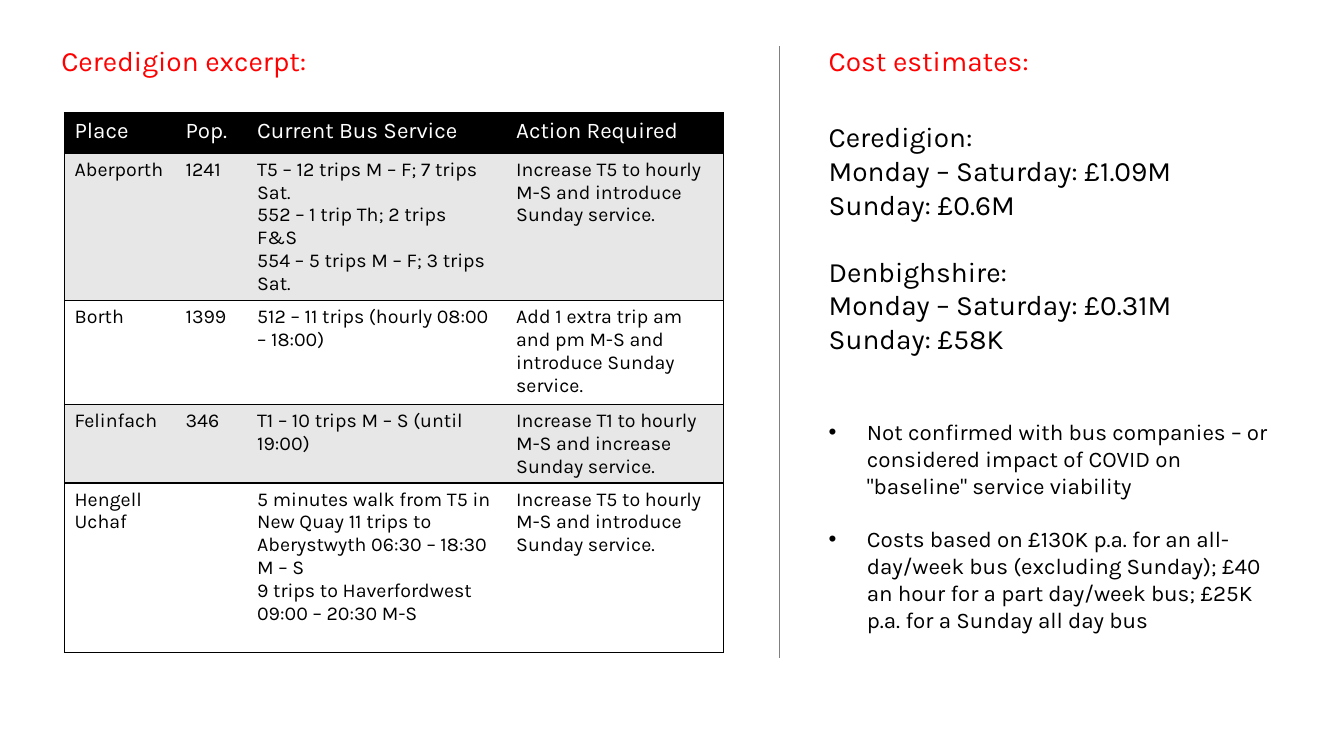
from lxml.etree import SubElement
from pptx import Presentation
from pptx.dml.color import RGBColor
from pptx.enum.shapes import MSO_CONNECTOR
from pptx.enum.text import MSO_AUTO_SIZE
from pptx.oxml.ns import qn
from pptx.util import Inches, Pt

COLORS = {"heading": "FF0000", "text": "000000", "header_text": "FFFFFF",
          "header": "000000", "shaded": "E7E7E7", "plain": "FFFFFF",
          "border": "000000", "divider": "808080"}
FONT = {"name": "Karla", "bold": False}
NBSP = chr(160)  # closes each table line, so the last word wraps with it

HEADINGS = ["Place", "Pop.", "Current Bus Service", "Action Required"]
PLACES = [
    ["Aberporth", "1241",
     "T5 – 12 trips M – F; 7 trips Sat.\n552 – 1 trip Th; 2 trips F&S\n"
     "554 – 5 trips M – F; 3 trips Sat.",
     "Increase T5 to hourly M-S and introduce Sunday service."],
    ["Borth", "1399", "512 – 11 trips (hourly 08:00 – 18:00)",
     "Add 1 extra trip am and pm M-S and introduce Sunday service."],
    ["Felinfach", "346", "T1 – 10 trips M – S (until 19:00)",
     "Increase T1 to hourly M-S and increase Sunday service."],
    ["Hengell Uchaf", "",
     "5 minutes walk from T5 in New Quay 11 trips to Aberystwyth 06:30 – 18:30 M – S\n"
     "9 trips to Haverfordwest 09:00 – 20:30 M-S",
     "Increase T5 to hourly M-S and introduce Sunday service."],
]
COLUMN_WIDTHS = [1.1, 0.71, 2.57, 2.16]
ROW_HEIGHTS = [0.4, 1.03, 1.03, 0.72, 1.68]

COSTS = [
    ["Ceredigion:", "Monday – Saturday: £1.09M", "Sunday: £0.6M"],
    ["Denbighshire:", "Monday – Saturday: £0.31M", "Sunday: £58K"],
]
CAVEATS = [
    ['Not confirmed with bus companies – or considered impact of COVID on '
     '"baseline" service viability'],
    ["Costs based on £130K p.a. for an all-day/week bus (excluding Sunday); £40 "
     "an hour for a part day/week bus; £25K p.a. for a Sunday all day bus"],
]


def rgb(color):
    return RGBColor.from_string(COLORS[color])


def add_text(paragraph, text, size, color):
    run = paragraph.add_run()
    run.text = text
    for attribute, value in {**FONT, "size": Pt(size)}.items():
        setattr(run.font, attribute, value)
    run.font.color.rgb = rgb(color)


def add_bullet(paragraph):
    properties = paragraph._p.get_or_add_pPr()
    indent = Inches(0.38)
    properties.set("marL", str(indent))
    properties.set("indent", str(-indent))
    SubElement(properties, qn("a:buFont"), typeface="Arial")
    SubElement(properties, qn("a:buChar"), char="•")


def add_groups(slide, place, groups, size, color="text", gap=0, bulleted=False):
    """Text box of line groups, with a gap in points between groups."""
    frame = slide.shapes.add_textbox(*map(Inches, place)).text_frame
    frame.word_wrap = True
    frame.auto_size = MSO_AUTO_SIZE.SHAPE_TO_FIT_TEXT
    for g, group in enumerate(groups):
        for i, line in enumerate(group):
            first = g == i == 0
            paragraph = frame.paragraphs[0] if first else frame.add_paragraph()
            if g and not i:
                paragraph.space_before = Pt(gap)
            if bulleted:
                add_bullet(paragraph)
            add_text(paragraph, line, size, color)


def set_borders(cell, visible):
    properties = cell._tc.get_or_add_tcPr()
    for side in "LRTB":
        line = SubElement(properties, qn(f"a:ln{side}"), w=str(Pt(1)))
        if side in visible:
            fill = SubElement(line, qn("a:solidFill"))
            SubElement(fill, qn("a:srgbClr"), val=COLORS["border"])
        else:
            SubElement(line, qn("a:noFill"))


def fill_cell(cell, text, size, color, background, borders):
    set_borders(cell, borders)
    cell.fill.solid()
    cell.fill.fore_color.rgb = rgb(background)
    frame = cell.text_frame
    for i, line in enumerate(text.split("\n")):
        paragraph = frame.add_paragraph() if i else frame.paragraphs[0]
        if line:
            add_text(paragraph, line + NBSP, size, color)


def add_service_table(slide):
    rows = [HEADINGS] + PLACES
    services = slide.shapes.add_table(
        len(rows), len(HEADINGS), Inches(0.64), Inches(1.12),
        Inches(sum(COLUMN_WIDTHS)), Inches(sum(ROW_HEIGHTS))).table
    services.first_row = services.horz_banding = False
    for column, width in zip(services.columns, COLUMN_WIDTHS):
        column.width = Inches(width)
    for row, height in zip(services.rows, ROW_HEIGHTS):
        row.height = Inches(height)
    for r, texts in enumerate(rows):
        background = ("shaded" if r % 2 else "plain") if r else "header"
        size, color = (14, "text") if r else (16, "header_text")
        for c, text in enumerate(texts):
            borders = "TB" + {0: "L", len(texts) - 1: "R"}.get(c, "")
            fill_cell(services.cell(r, c), text, size, color, background, borders)


def add_divider(slide, x, top, bottom):
    divider = slide.shapes.add_connector(
        MSO_CONNECTOR.STRAIGHT, *map(Inches, (x, top, x, bottom)))
    divider.line.color.rgb = rgb("divider")
    divider.line.width = Pt(0.5)
    SubElement(divider._element.spPr, qn("a:effectLst"))


def main():
    deck = Presentation()
    deck.slide_width, deck.slide_height = Inches(13.33), Inches(7.5)
    slide = deck.slides.add_slide(deck.slide_layouts[6])

    # Bus services by place
    add_service_table(slide)
    add_groups(slide, (0.51, 0.38, 4.9, 0.44), [["Ceredigion excerpt:"]], 20, "heading")

    # Cost estimates and their caveats
    add_groups(slide, (8.12, 0.38, 3.92, 0.44), [["Cost estimates:"]], 20, "heading")
    add_groups(slide, (8.12, 1.14, 4.59, 2.46), COSTS, 20, gap=24)
    add_divider(slide, 7.73, 0.46, 6.53)
    add_groups(slide, (8.12, 4.1, 4.59, 2.26), CAVEATS, 16, gap=19, bulleted=True)

    deck.save("out.pptx")


if __name__ == "__main__":
    main()
